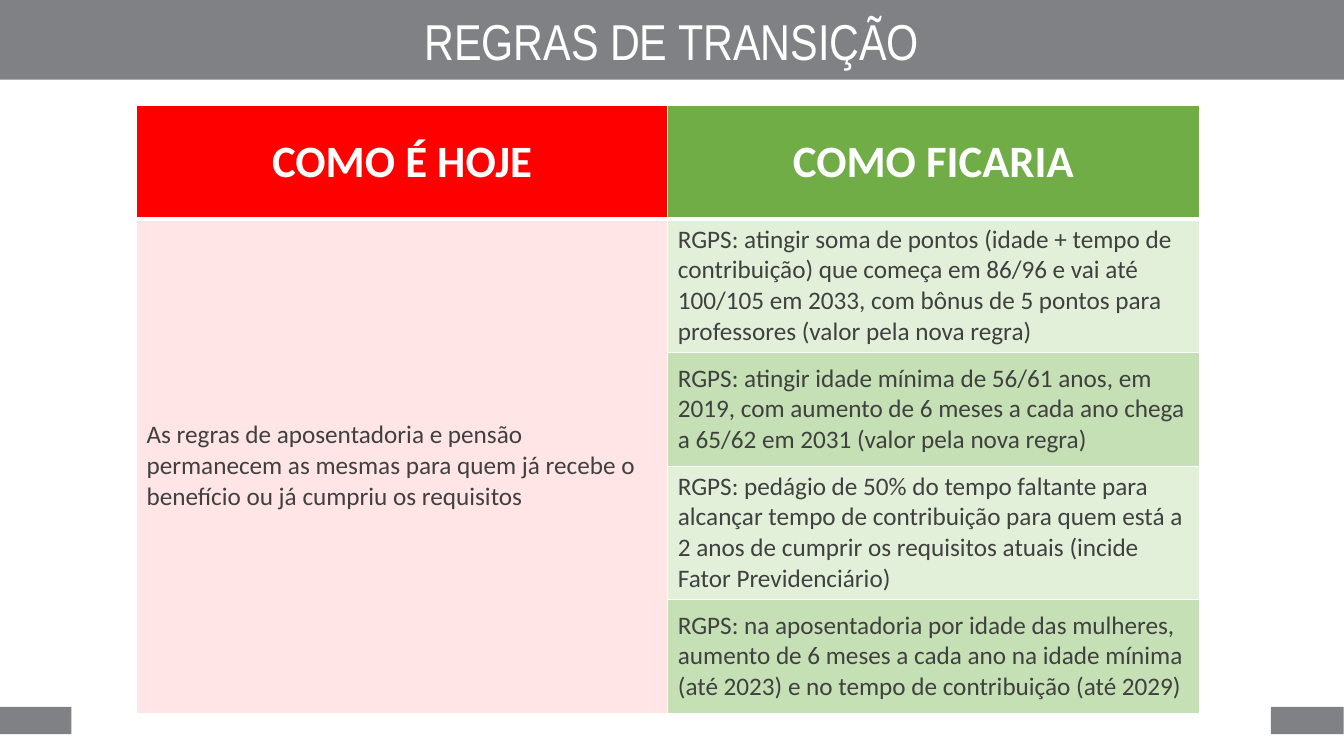
import pptx
import pptx.dml.color
import pptx.enum.shapes
import pptx.enum.text
import pptx.oxml
import pptx.oxml.ns
import pptx.util
from pptx.util import Cm

GREY, WHITE, TEXT_GREY = "808184", "FFFFFF", "404040"
RED, PALE_RED = "FF0000", "FFE5E5"
GREEN, LIGHT_GREEN, PALE_GREEN = "70AD47", "C5E0B4", "E2F0D9"
SLIDE_WIDTH, SLIDE_HEIGHT = Cm(33.87), Cm(19.05)
COLUMN_WIDTH, ROW_HEIGHT = Cm(13.39), Cm(2.87)

CURRENT_RULE = (
    "As regras de aposentadoria e pensão permanecem as mesmas para quem já "
    "recebe o benefício ou já cumpriu os requisitos"
)
NEW_RULES = [
    "RGPS: atingir soma de pontos (idade + tempo de contribuição) que começa em "
    "86/96 e vai até 100/105 em 2033, com bônus de 5 pontos para professores "
    "(valor pela nova regra)",
    "RGPS: atingir idade mínima de 56/61 anos, em 2019, com aumento de 6 meses "
    "a cada ano chega a 65/62 em 2031 (valor pela nova regra)",
    "RGPS: pedágio de 50% do tempo faltante para alcançar tempo de contribuição "
    "para quem está a 2 anos de cumprir os requisitos atuais (incide Fator "
    "Previdenciário)",
    "RGPS: na aposentadoria por idade das mulheres, aumento de 6 meses a cada ano "
    "na idade mínima (até 2023) e no tempo de contribuição (até 2029)",
]


def paint(fill, color):
    fill.solid()
    fill.fore_color.rgb = pptx.dml.color.RGBColor.from_string(color)


def format_text(text_frame, font_name, size, color, bold=False, centered=False):
    align = pptx.enum.text.PP_ALIGN
    para = text_frame.paragraphs[0]
    para.alignment = align.CENTER if centered else align.LEFT
    font = para.runs[0].font
    font.name = font_name
    font.size = pptx.util.Pt(size)
    font.bold = bold
    font.color.rgb = pptx.dml.color.RGBColor.from_string(color)


def add_bar(page, left, top, width, height):
    bar = page.shapes.add_shape(
        pptx.enum.shapes.MSO_SHAPE.RECTANGLE, left, top, width, height
    )
    bar.shadow.inherit = False
    paint(bar.fill, GREY)
    bar.line.fill.background()
    return bar


def add_title_bar(page, title):
    bar = add_bar(page, 0, 0, SLIDE_WIDTH, Cm(2.01))
    bar.text_frame.text = title
    bar.text_frame.vertical_anchor = pptx.enum.text.MSO_ANCHOR.MIDDLE
    format_text(bar.text_frame, "Arial Narrow", 36, WHITE, centered=True)


def set_borders(cell, top, bottom):
    """Draw white borders; top and bottom are widths in points, the sides 1 point."""
    properties = cell._tc.get_or_add_tcPr()
    widths = {"lnL": 1, "lnR": 1, "lnT": top, "lnB": bottom}
    for index, (side, width) in enumerate(widths.items()):
        border = pptx.oxml.parse_xml(
            f'<a:{side} {pptx.oxml.ns.nsdecls("a")} w="{pptx.util.Pt(width)}">'
            f'<a:solidFill><a:srgbClr val="{WHITE}"/></a:solidFill></a:{side}>'
        )
        properties.insert(index, border)


def fill_cell(cell, text, color):
    cell.text_frame.text = text
    cell.vertical_anchor = pptx.enum.text.MSO_ANCHOR.MIDDLE
    paint(cell.fill, color)


def add_comparison_table(page):
    row_count = len(NEW_RULES) + 1
    table = page.shapes.add_table(
        row_count, 2, Cm(3.44), Cm(2.65), 2 * COLUMN_WIDTH, row_count * ROW_HEIGHT
    ).table
    for column, (heading, color) in enumerate(
        [("COMO É HOJE", RED), ("COMO FICARIA", GREEN)]
    ):
        cell = table.cell(0, column)
        fill_cell(cell, heading, color)
        format_text(cell.text_frame, "Calibri", 32, WHITE, bold=True, centered=True)

    current = table.cell(1, 0)
    current.merge(table.cell(row_count - 1, 0))
    fill_cell(current, CURRENT_RULE, PALE_RED)
    format_text(current.text_frame, "Calibri", 18, TEXT_GREY)

    for row, rule in enumerate(NEW_RULES, start=1):
        cell = table.cell(row, 1)
        fill_cell(cell, rule, PALE_GREEN if row % 2 else LIGHT_GREEN)
        format_text(cell.text_frame, "Calibri", 18, TEXT_GREY)

    for row in range(row_count):
        for column in range(2):
            set_borders(
                table.cell(row, column),
                top=3 if row == 1 else 1,
                bottom=3 if row == 0 else 1,
            )


def main():
    deck = pptx.Presentation()
    deck.slide_width, deck.slide_height = SLIDE_WIDTH, SLIDE_HEIGHT
    page = deck.slides.add_slide(deck.slide_layouts[6])
    for left in (Cm(32.03), Cm(-0.03)):
        add_bar(page, left, Cm(17.81), Cm(1.83), Cm(0.69))
    add_title_bar(page, "REGRAS DE TRANSIÇÃO")
    add_comparison_table(page)
    deck.save("out.pptx")


if __name__ == "__main__":
    main()
